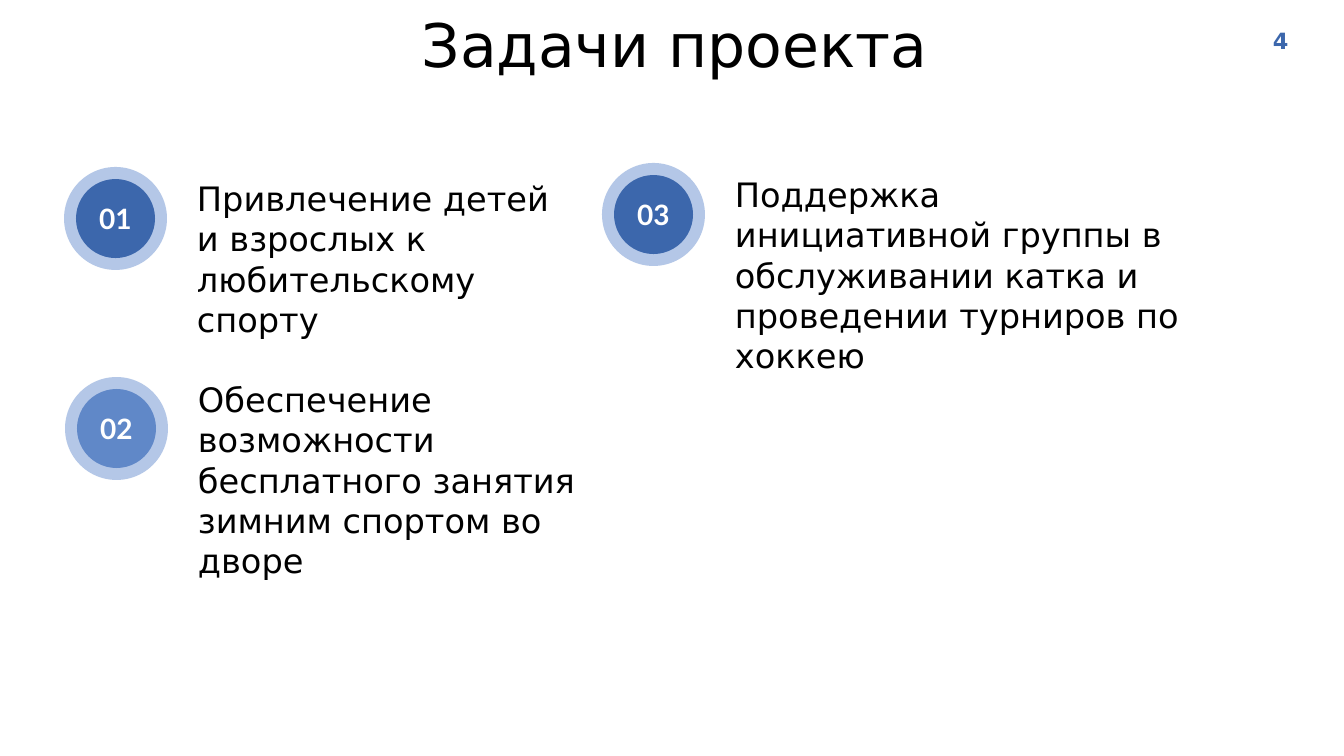
from pptx import Presentation
from pptx.dml.color import RGBColor
from pptx.enum.shapes import MSO_SHAPE as Shape
from pptx.enum.text import MSO_ANCHOR as Anchor, MSO_AUTO_SIZE as AutoSize, PP_ALIGN as Align
from pptx.util import Emu, Pt

BLACK = RGBColor(0x00, 0x00, 0x00)
WHITE = RGBColor(0xFF, 0xFF, 0xFF)
BLUE = RGBColor(0x3C, 0x67, 0xAC)
LIGHT_BLUE = RGBColor(0x60, 0x88, 0xC8)
PALE_BLUE = RGBColor(0xB4, 0xC7, 0xE7)
RING, DISC, RIM = 103, 79, 12


def px(*lengths):
    return [Emu(round(length * 914400 / 100.8)) for length in lengths]


def write(frame, text, size, color, font="DejaVu Sans", bold=False):
    frame.word_wrap = True
    run = frame.paragraphs[0].add_run()
    run.text = text
    run.font.name = font
    run.font.size = Pt(size)
    run.font.bold = bold
    run.font.color.rgb = color


prs = Presentation()
prs.slide_width, prs.slide_height = px(1344, 756)
slide = prs.slides.add_slide(prs.slide_layouts[5])

heading = slide.shapes.title
heading.left, heading.top, heading.width, heading.height = px(50, 11, 1249, 126)
heading.text_frame.auto_size = AutoSize.NONE
heading.text_frame.vertical_anchor = Anchor.TOP
write(heading.text_frame, "Задачи проекта", 42.9, BLACK)
heading.text_frame.paragraphs[0].alignment = Align.CENTER
heading.text_frame.paragraphs[0].line_spacing = 0.9

page_number = slide.shapes.add_textbox(*px(1263, 22, 81, 40))
write(page_number.text_frame, "4", 16, BLUE, bold=True)

goals = [
    ("01", 64, 167, BLUE, 178, 371, "Привлечение детей и взрослых к любительскому спорту"),
    ("02", 65, 377, LIGHT_BLUE, 379, 437,
     "Обеспечение возможности бесплатного занятия зимним спортом во дворе"),
    ("03", 602, 163, BLUE, 174, 454,
     "Поддержка инициативной группы в обслуживании катка и проведении турниров по хоккею"),
]

for number, left, top, disc_color, goal_top, goal_width, goal_text in goals:
    badge = slide.shapes.add_group_shape()
    ring = badge.shapes.add_shape(Shape.OVAL, *px(left, top, RING, RING))
    disc = badge.shapes.add_shape(Shape.OVAL, *px(left + RIM, top + RIM, DISC, DISC))
    for circle, color in ((ring, PALE_BLUE), (disc, disc_color)):
        circle.shadow.inherit = False
        circle.fill.solid()
        circle.fill.fore_color.rgb = color
        circle.line.fill.background()
    label = disc.text_frame
    label.vertical_anchor = Anchor.MIDDLE
    label.margin_left = label.margin_right = 0
    write(label, number, 20, WHITE, "Lato", True)
    label.paragraphs[0].alignment = Align.CENTER

    goal = slide.shapes.add_textbox(*px(left + 133, goal_top, goal_width, 202)).text_frame
    goal.margin_left = goal.margin_right = goal.margin_top = goal.margin_bottom = 0
    write(goal, goal_text, 24, BLACK)

prs.save("out.pptx")
